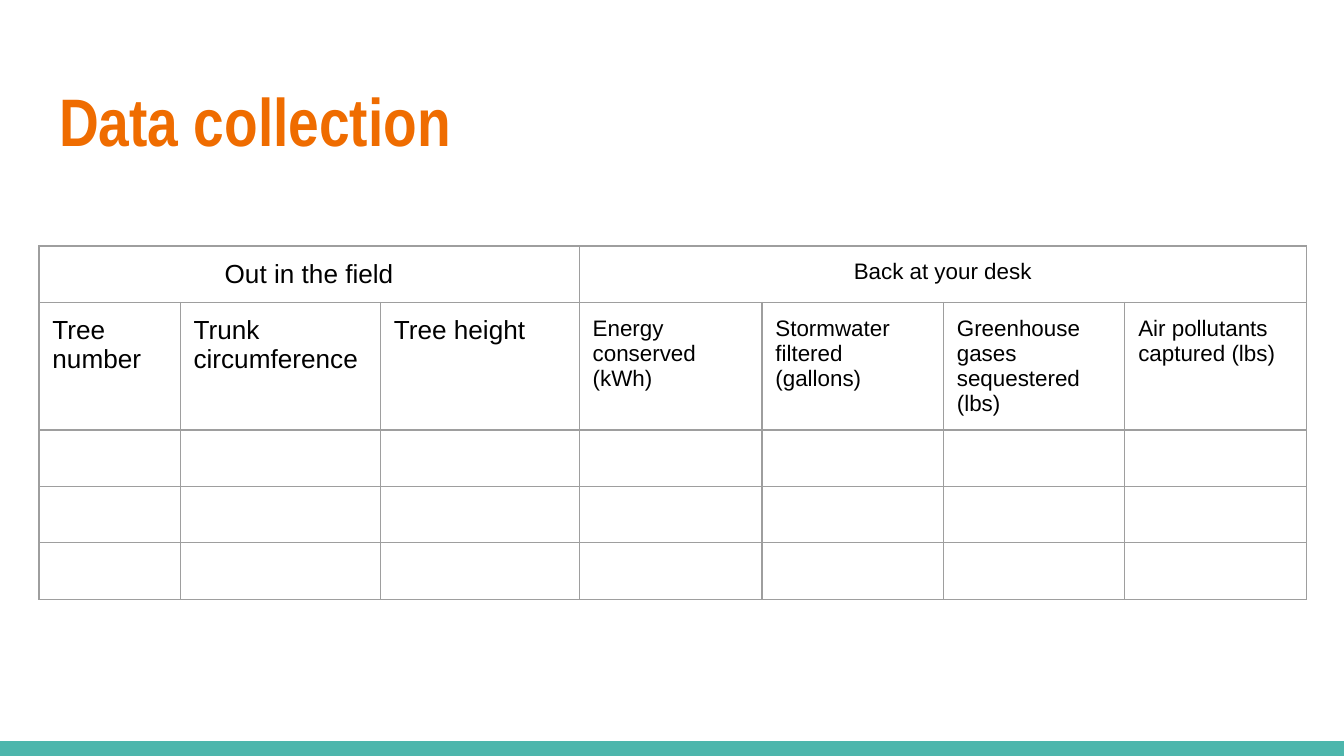
from dataclasses import dataclass

from lxml.etree import SubElement
from pptx import Presentation
from pptx.dml.color import RGBColor as RGB
from pptx.enum.shapes import MSO_SHAPE as Shape
from pptx.enum.text import MSO_ANCHOR as Anchor, PP_ALIGN as Align
from pptx.oxml.ns import qn
from pptx.util import Inches, Pt


@dataclass(frozen=True)
class Theme:
    teal: RGB = RGB(0x4D, 0xB6, 0xAC)
    orange: RGB = RGB(0xEF, 0x6C, 0x00)
    ink: RGB = RGB(0, 0, 0)
    rule: str = "9E9E9E"
    head: str = "Arial Narrow"
    body: str = "Arial"
    title: int = 36
    field: int = 14
    desk: int = 12
    line: float = 0.75
    pad: float = 0.1


T = Theme()
WIDE = 10
HIGH = WIDE * 9 / 16
BAND = 0.11
COLS = [1.05, 1.49, 1.48, 1.36, 1.35, 1.35, 1.35]
ROWS = [0.42, 0.95, 0.42, 0.42, 0.42]
SPLIT = 3  # columns filled in out in the field
GROUPS = [("Out in the field", 0, SPLIT - 1), ("Back at your desk", SPLIT, len(COLS) - 1)]
HEADS = [
    "Tree number", "Trunk circumference", "Tree height",
    "Energy conserved (kWh)", "Stormwater filtered (gallons)",
    "Greenhouse gases sequestered (lbs)", "Air pollutants captured (lbs)",
]


def style(para, face, size, color, bold=False):
    for run in para.runs:
        font = run.font
        font.name, font.size, font.bold = face, Pt(size), bold
        font.color.rgb = color


def pad(item):
    item.margin_left = item.margin_right = Inches(T.pad)
    item.margin_top = item.margin_bottom = Inches(T.pad)


def add_band(slide, x, y, w, h):
    band = slide.shapes.add_shape(Shape.RECTANGLE, Inches(x), Inches(y), Inches(w), Inches(h))
    band.shadow.inherit = False
    band.fill.solid()
    band.fill.fore_color.rgb = T.teal
    band.line.fill.background()


def add_title(slide, text, x, y, w, h):
    title = slide.shapes.title
    title.left, title.top, title.width, title.height = map(Inches, (x, y, w, h))
    frame = title.text_frame
    frame.text = text
    frame.word_wrap = True
    frame.vertical_anchor = Anchor.TOP
    pad(frame)
    para = frame.paragraphs[0]
    para.alignment = Align.LEFT
    style(para, T.head, T.title, T.orange, True)


def set_rules(cell):
    props = cell._tc.get_or_add_tcPr()
    for i, side in enumerate(("a:lnL", "a:lnR", "a:lnT", "a:lnB")):
        line = props.makeelement(qn(side), {"w": str(Pt(T.line))})
        props.insert(i, line)
        fill = SubElement(line, qn("a:solidFill"))
        SubElement(fill, qn("a:srgbClr"), val=T.rule)


def set_end(cell):
    para = cell.text_frame.paragraphs[0]
    end = SubElement(para._p, qn("a:endParaRPr"), sz=str(T.field * 100))
    SubElement(end, qn("a:latin"), typeface=T.body)


def set_text(cell, text, col, align=Align.LEFT):
    cell.text_frame.text = text
    para = cell.text_frame.paragraphs[0]
    para.alignment = align
    style(para, T.body, T.field if col < SPLIT else T.desk, T.ink)


def add_grid(slide, x, y):
    frame = slide.shapes.add_table(
        len(ROWS), len(COLS), Inches(x), Inches(y), Inches(sum(COLS)), Inches(sum(ROWS)))
    table = frame.table
    table.first_row = table.horz_banding = False
    for col, width in zip(table.columns, COLS):
        col.width = Inches(width)
    for row, height in zip(table.rows, ROWS):
        row.height = Inches(height)

    # Plain ruled cells; the end mark keeps blank rows low
    for cell in table.iter_cells():
        cell.fill.background()
        cell.vertical_anchor = Anchor.TOP
        pad(cell)
        set_rules(cell)
        set_end(cell)

    # Group row, then column heads
    for text, first, last in GROUPS:
        cell = table.cell(0, first)
        cell.merge(table.cell(0, last))
        set_text(cell, text, first, Align.CENTER)
    for col, text in enumerate(HEADS):
        set_text(table.cell(1, col), text, col)


def main():
    deck = Presentation()
    deck.slide_width, deck.slide_height = Inches(WIDE), Inches(HIGH)
    slide = deck.slides.add_slide(deck.slide_layouts[5])
    add_band(slide, 0, HIGH - BAND, WIDE, BAND)
    add_title(slide, "Data collection", 0.34, 0.49, 9.32, 0.77)
    add_grid(slide, 0.29, 1.83)
    deck.save("out.pptx")


if __name__ == "__main__":
    main()
